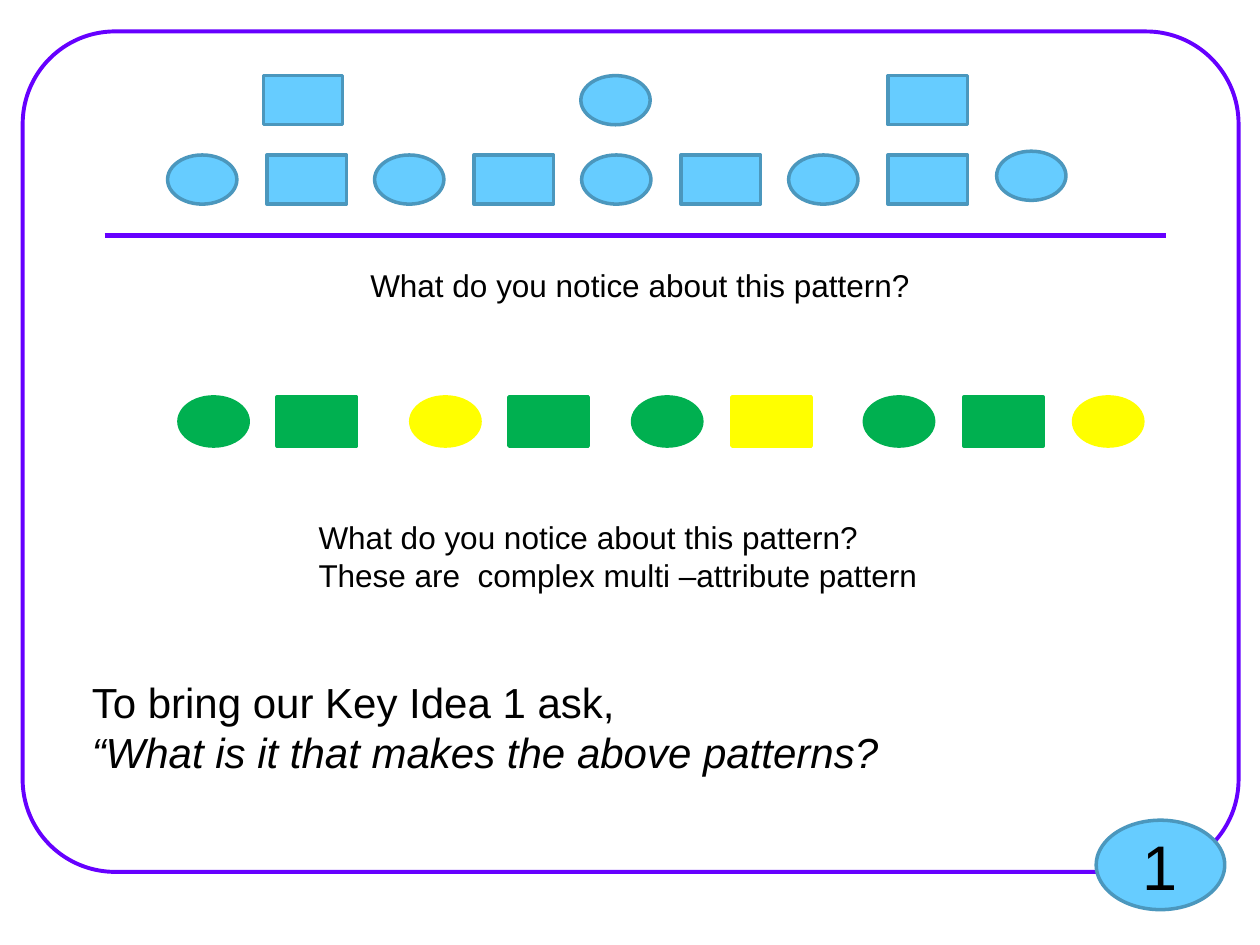
from lxml import etree
from pptx import Presentation
from pptx.dml.color import RGBColor
from pptx.enum.shapes import MSO_CONNECTOR, MSO_SHAPE
from pptx.enum.text import MSO_ANCHOR, MSO_AUTO_SIZE, PP_ALIGN
from pptx.oxml.ns import qn
from pptx.util import Inches, Pt

OVAL, RECT, FRAME = MSO_SHAPE.OVAL, MSO_SHAPE.RECTANGLE, MSO_SHAPE.ROUNDED_RECTANGLE
FONT = "Arial"
COLORS = {"purple": "6600FF", "blue": "66CCFF", "edge": "4B97BD",
          "green": "00B050", "yellow": "FFFF00", "black": "000000"}

SIZES = {OVAL: (0.55, 0.39), RECT: (0.63, 0.39)}
TOP_ROW_Y, ROW_Y, COLOR_ROW_Y = 0.6, 1.23, 3.15
TOP_ROW = [(RECT, 2.09), (OVAL, 4.61), (RECT, 7.05)]
# Oval and rectangle alternate; each pair repeats at a fixed pitch
ROW_LEFT, PAIR_PITCH, RECT_OFFSET, PAIRS = 1.33, 1.643, 0.79, 4
LAST_OVAL = (7.91, 1.2)
COLOR_ROW = [
    (OVAL, 1.42, "green"), (RECT, 2.2, "green"), (OVAL, 3.26, "yellow"),
    (RECT, 4.04, "green"), (OVAL, 5.02, "green"), (RECT, 5.81, "yellow"),
    (OVAL, 6.86, "green"), (RECT, 7.65, "green"), (OVAL, 8.52, "yellow"),
]
# Box, point size, lines as (text, italic)
TEXTS = [
    ((2.84, 2.06, 4.52, 0.4), 18, [("What do you notice about this pattern?", False)]),
    ((2.43, 4.06, 5, 0.71), 18, [("What do you notice about this pattern?", False),
                                 ("These are  complex multi –attribute pattern", False)]),
    ((0.63, 5.32, 6.51, 0.91), 24, [("To bring our Key Idea 1 ask,", False),
                                    ("“What is it that makes the above patterns?", True)]),
]


def rgb(name):
    return RGBColor.from_string(COLORS[name])


def add_shape(slide, kind, box, fill, line, width=2):
    sp = slide.shapes.add_shape(kind, *map(Inches, box))
    sp.shadow.inherit = False
    if fill:
        sp.fill.solid()
        sp.fill.fore_color.rgb = rgb(fill)
    else:
        sp.fill.background()
    sp.line.color.rgb = rgb(line)
    sp.line.width = Pt(width)
    return sp


def add_piece(slide, kind, left, top, fill="blue", line="edge"):
    add_shape(slide, kind, (left, top, *SIZES[kind]), fill, line)


def style_paragraph(p, size, italic=False):
    for r in p.runs:
        r.font.name, r.font.size, r.font.italic = FONT, Pt(size), italic
        r.font.color.rgb = rgb("black")


def add_text(slide, box, size, lines):
    tf = slide.shapes.add_textbox(*map(Inches, box)).text_frame
    tf.word_wrap = False
    tf.auto_size = MSO_AUTO_SIZE.SHAPE_TO_FIT_TEXT
    tf.text = "\n".join(text for text, _ in lines)
    for p, (_, italic) in zip(tf.paragraphs, lines):
        style_paragraph(p, size, italic)


def add_rule(slide, left, right, y):
    line = slide.shapes.add_connector(
        MSO_CONNECTOR.STRAIGHT, Inches(left), Inches(y), Inches(right), Inches(y))
    line.line.color.rgb = rgb("purple")
    line.line.width = Pt(3)
    etree.SubElement(line._element.spPr, qn("a:effectLst"))


def add_badge(slide, box, text):
    sp = add_shape(slide, OVAL, box, "blue", "edge")
    tf = sp.text_frame
    tf.text = text
    tf.vertical_anchor = MSO_ANCHOR.MIDDLE
    tf.paragraphs[0].alignment = PP_ALIGN.CENTER
    style_paragraph(tf.paragraphs[0], 36)


def main():
    prs = Presentation()
    prs.slide_width, prs.slide_height = Inches(10), Inches(7.5)
    slide = prs.slides.add_slide(prs.slide_layouts[6])

    frame = add_shape(slide, FRAME, (0.18, 0.25, 9.65, 6.67), None, "purple", 2.25)
    frame.adjustments[0] = 0.11
    add_rule(slide, 0.83, 9.25, 1.87)

    for kind, left in TOP_ROW:
        add_piece(slide, kind, left, TOP_ROW_Y)
    for i in range(PAIRS):
        left = ROW_LEFT + i * PAIR_PITCH
        add_piece(slide, OVAL, left, ROW_Y)
        add_piece(slide, RECT, left + RECT_OFFSET, ROW_Y)
    add_piece(slide, OVAL, *LAST_OVAL)
    for kind, left, color in COLOR_ROW:
        add_piece(slide, kind, left, COLOR_ROW_Y, color, color)

    for box, size, lines in TEXTS:
        add_text(slide, box, size, lines)
    add_badge(slide, (8.7, 6.51, 1.02, 0.71), "1")
    prs.save("out.pptx")


if __name__ == "__main__":
    main()
